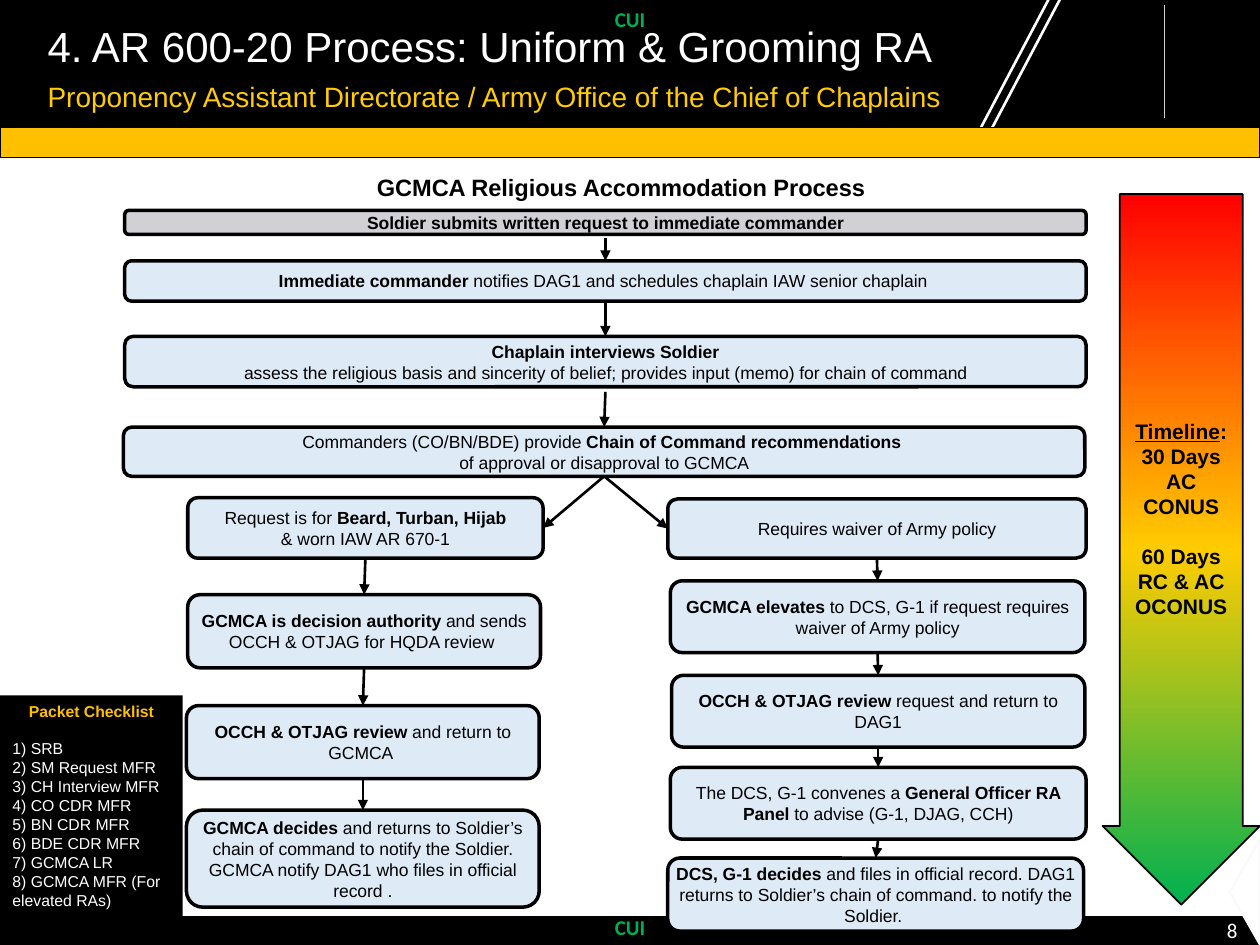
from itertools import pairwise

from lxml import etree
from pptx import Presentation
from pptx.dml.color import RGBColor
from pptx.enum.shapes import MSO_CONNECTOR, MSO_SHAPE as SHAPE
from pptx.enum.text import MSO_ANCHOR as ANCHOR, PP_ALIGN as ALIGN
from pptx.oxml import parse_xml
from pptx.oxml.ns import nsdecls, qn
from pptx.util import Inches, Pt

COLORS = {
    "black": "000000", "white": "FFFFFF", "band": "FFC000", "gold": "FFCC01",
    "green": "00B050", "red": "FF0000", "step": "DEEBF7", "start": "D1D0D5",
    "rule": "D0D0D0", "corner": "F9F9F9",
}

# Content: ** marks bold, __ marks underline
TITLE = "4. AR 600-20 Process: Uniform & Grooming RA"
SUBTITLE = "Proponency Assistant Directorate / Army Office of the Chief of Chaplains"
HEADING = "**GCMCA Religious Accommodation Process**"
MARKING = "**CUI**"
PAGE = "8"

# Each step: left, top, width, height, lines
TRUNK = [
    (0.99, 1.67, 7.63, 0.19, ["**Soldier submits written request to immediate commander**"]),
    (0.99, 2.07, 7.63, 0.32, ["**Immediate commander **notifies DAG1 and schedules chaplain IAW senior chaplain "]),
    (0.99, 2.67, 7.63, 0.4, ["**Chaplain interviews Soldier**",
                             "assess the religious basis and sincerity of belief; "
                             "provides input (memo) for chain of command"]),
    (0.98, 3.39, 7.63, 0.39, ["Commanders (CO/BN/BDE) provide **Chain of Command recommendations **",
                              "of approval or disapproval to GCMCA"]),
]
GCMCA_BRANCH = [
    (1.49, 3.95, 2.82, 0.48, ["Request is for **Beard, Turban, Hijab**", "& worn IAW AR 670-1"]),
    (1.49, 4.72, 2.8, 0.58, ["**GCMCA is decision authority **and sends OCCH & OTJAG for HQDA review "]),
    (1.48, 5.6, 2.8, 0.58, ["**OCCH & OTJAG review **and return to GCMCA "]),
    (1.48, 6.43, 2.8, 0.77, ["**GCMCA decides **and returns to Soldier’s chain of command to notify "
                             "the Soldier. GCMCA notify DAG1 who files in official record ."]),
]
WAIVER_BRANCH = [
    (5.3, 3.96, 3.32, 0.47, ["Requires waiver of Army policy"]),
    (5.32, 4.61, 3.29, 0.57, ["**GCMCA elevates **to DCS, G-1 if request requires waiver of Army policy"]),
    (5.33, 5.36, 3.28, 0.57, ["**OCCH & OTJAG review** request and return to DAG1"]),
    (5.32, 6.09, 3.3, 0.57, ["The DCS, G-1 convenes a **General Officer RA Panel** to advise (G-1, DJAG, CCH)"]),
    (5.3, 6.81, 3.3, 0.58, ["**DCS, G-1 decides **and files in official record. DAG1 returns to "
                            "Soldier’s chain of command. to notify the Soldier. "]),
]
CHECKLIST_TITLE = "**Packet Checklist**"
CHECKLIST = ["1) SRB", "2) SM Request MFR", "3) CH Interview MFR", "4) CO CDR MFR",
             "5) BN CDR MFR", "6) BDE CDR MFR", "7) GCMCA LR",
             "8) GCMCA MFR (For elevated RAs)"]
TIMELINE = ["**__Timeline__:**", "**30 Days AC CONUS**", "**60 Days RC & AC OCONUS**"]
TIMELINE_STOPS = [(0, "red"), (50, "gold"), (100, "green")]

prs = Presentation()
prs.slide_width, prs.slide_height = Inches(10), Inches(7.5)
slide = prs.slides.add_slide(prs.slide_layouts[6])


def rgb(name):
    return RGBColor.from_string(COLORS[name])


def write(shape, lines, size, color="black", align=ALIGN.CENTER, anchor=ANCHOR.MIDDLE,
          font="Arial", insets=(0.1, 0.05), spacing=None):
    frame = shape.text_frame
    frame.word_wrap, frame.vertical_anchor = True, anchor
    frame.margin_left = frame.margin_right = Inches(insets[0])
    frame.margin_top = frame.margin_bottom = Inches(insets[1])
    for i, line in enumerate(lines):
        para = frame.paragraphs[0] if i == 0 else frame.add_paragraph()
        para.alignment, para.line_spacing = align, spacing
        para.font.size, para.font.name = Pt(size), font
        para.font.color.rgb = rgb(color)
        for b, part in enumerate(line.split("**")):
            for u, words in enumerate(part.split("__")):
                if words:
                    run = para.add_run()
                    run.text = words
                    run.font.bold = b % 2 == 1
                    if u % 2:
                        run.font.underline = True
    return frame.paragraphs


def add_text(box, text, size, **style):
    return write(slide.shapes.add_textbox(*map(Inches, box)), [text], size, **style)


def add_block(kind, box, fill, line="black", width=1.0):
    block = slide.shapes.add_shape(kind, *map(Inches, box))
    block.shadow.inherit = False
    if fill:
        block.fill.solid()
        block.fill.fore_color.rgb = rgb(fill)
    if line:
        block.line.color.rgb = rgb(line)
        block.line.width = Pt(width)
    else:
        block.line.fill.background()
    return block


def add_line(x1, y1, x2, y2, color, width):
    line = slide.shapes.add_connector(MSO_CONNECTOR.STRAIGHT, *map(Inches, (x1, y1, x2, y2)))
    line.line.color.rgb = rgb(color)
    line.line.width = Pt(width)
    etree.SubElement(line._element.spPr, qn("a:effectLst"))
    return line


def add_arrow(source, target, side=0, gap=0):
    """Arrow from the bottom of source to a side of target."""
    arrow = add_line(0, 0, 0, 0, "black", 1.5)
    arrow.begin_connect(source, 2)
    arrow.end_connect(target, side)
    if gap:
        arrow.begin_y = source.top + source.height + Inches(gap)
    etree.SubElement(arrow.line._get_or_add_ln(), qn("a:tailEnd"), type="triangle")


def add_steps(steps):
    blocks = []
    for *box, lines in steps:
        block = add_block(SHAPE.ROUNDED_RECTANGLE, box, "step", width=2)
        write(block, lines, 10, insets=(0, 0))
        blocks.append(block)
    return blocks


# Header and footer
add_block(SHAPE.RECTANGLE, (0, 7.28, 10, 0.22), "black")
corner = add_block(SHAPE.ISOSCELES_TRIANGLE, (9.46, 6.96, 0.84, 0.24), "white", "corner")
corner.rotation = 270
add_block(SHAPE.RECTANGLE, (0, 0, 10, 1), "black")
for foot in (7.66, 7.75):
    add_line(foot, 1.25, foot + 0.67, -0.02, "white", 1.5)
add_line(9.24, 0.04, 9.24, 0.94, "rule", 0.5)
for top, height in ((-0.05, 0.4), (7.2, 0.32)):
    add_text((3.31, top, 3.38, height), MARKING, 12, color="green", font="Calibri")
add_text((7.67, 7.18, 2.25, 0.4), PAGE, 12, color="white", font="Calibri", align=ALIGN.RIGHT)
add_text((0.28, 0.61, 7.64, 0.3), SUBTITLE, 16, color="gold", align=ALIGN.LEFT,
         anchor=ANCHOR.TOP, spacing=0.9)
add_text((0.28, 0.07, 8.47, 0.64), TITLE, 24, color="white", align=ALIGN.LEFT, spacing=0.9)
add_block(SHAPE.RECTANGLE, (0, 1.01, 10, 0.24), "band", width=0.75)
add_text((2.38, 1.25, 5.1, 0.47), HEADING, 13.5, insets=(0.07, 0.04))

# Flowchart
trunk, gcmca, waiver = map(add_steps, (TRUNK, GCMCA_BRANCH, WAIVER_BRANCH))
trunk[0].fill.fore_color.rgb = rgb("start")
for (source, target), gap in zip(pairwise(trunk), (0.03, 0, 0.04)):
    add_arrow(source, target, gap=gap)
add_arrow(trunk[-1], gcmca[0], side=3)
add_arrow(trunk[-1], waiver[0], side=1)
for branch in (gcmca, waiver):
    for source, target in pairwise(branch):
        add_arrow(source, target)

# Packet checklist
checklist = add_block(SHAPE.RECTANGLE, (0, 5.52, 1.45, 1.77), "black", line=None)
entries = write(checklist, [CHECKLIST_TITLE, *CHECKLIST], 9, color="white",
                align=ALIGN.LEFT, anchor=ANCHOR.TOP)
entries[0].alignment = ALIGN.CENTER
entries[0].font.color.rgb = rgb("band")
entries[1].space_before = Pt(10.4)

# Timeline arrow
timeline = add_block(SHAPE.DOWN_ARROW, (8.75, 1.54, 1.25, 5.64), None)
timeline.adjustments[0], timeline.adjustments[1] = 0.78, 0.5
stops = "".join(f'<a:gs pos="{pos * 1000}"><a:srgbClr val="{COLORS[name]}"/></a:gs>'
                for pos, name in TIMELINE_STOPS)
timeline._element.spPr.find(qn("a:prstGeom")).addnext(parse_xml(
    f'<a:gradFill {nsdecls("a")}><a:gsLst>{stops}</a:gsLst>'
    '<a:lin ang="5400000" scaled="0"/></a:gradFill>'))
write(timeline, TIMELINE, 12)[2].space_before = Pt(13.8)

prs.save("out.pptx")
